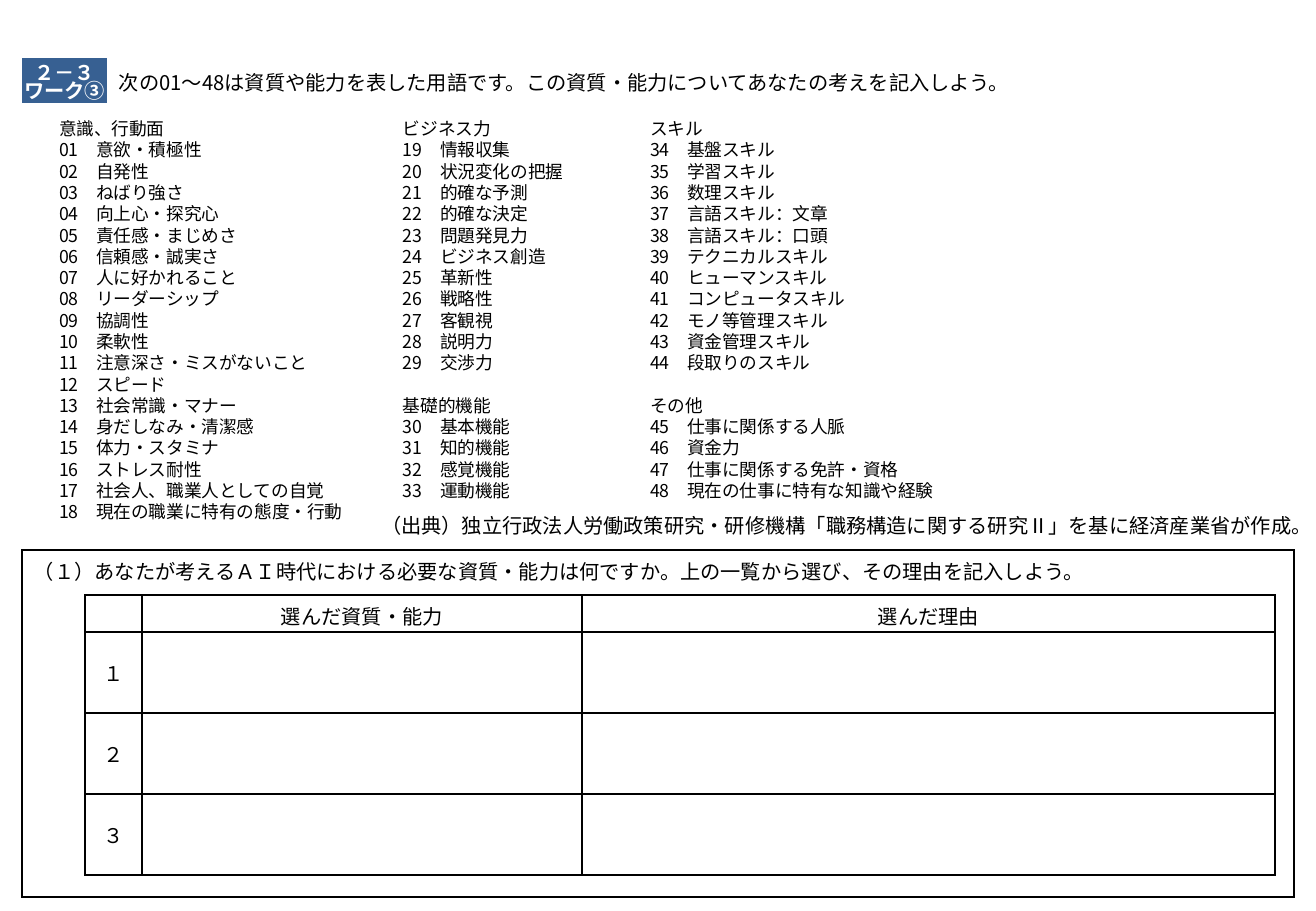
from lxml import etree
from pptx import Presentation
from pptx.dml.color import RGBColor
from pptx.enum.shapes import MSO_SHAPE
from pptx.enum.text import MSO_ANCHOR, PP_ALIGN
from pptx.oxml.ns import qn
from pptx.util import Emu, Pt

BLACK = RGBColor(0, 0, 0)
WHITE = RGBColor(255, 255, 255)
BLUE = RGBColor(0x37, 0x60, 0x92)
FONT = "Noto Sans CJK JP"
LEFT, CENTER = PP_ALIGN.LEFT, PP_ALIGN.CENTER
TOP, MIDDLE, BOTTOM = MSO_ANCHOR.TOP, MSO_ANCHOR.MIDDLE, MSO_ANCHOR.BOTTOM
RECTANGLE = MSO_SHAPE.RECTANGLE
PX = 914400 / 121.5
TERM_PITCH = Pt(12.6)


def write(holder, lines, size=12, color=BLACK, bold=False, align=LEFT,
          anchor=TOP, spacing=None, margins=(12, 6, 12, 6), gap_before=()):
    """Fill a text frame or table cell; margins are left, top, right, bottom."""
    frame = getattr(holder, "text_frame", holder)
    frame.word_wrap = True
    holder.vertical_anchor = anchor
    (holder.margin_left, holder.margin_top,
     holder.margin_right, holder.margin_bottom) = [Emu(round(m * PX)) for m in margins]
    for i, line in enumerate(lines):
        paragraph = frame.add_paragraph() if i else frame.paragraphs[0]
        paragraph.alignment = align
        if spacing:
            paragraph.line_spacing = spacing
        if i in gap_before:
            paragraph.space_before = TERM_PITCH
        if not line:
            etree.SubElement(paragraph._p, qn("a:endParaRPr"), sz=str(size * 100))
            continue
        run = paragraph.add_run()
        run.text = line
        run.font.size, run.font.bold, run.font.name = Pt(size), bold, FONT
        run.font.color.rgb = color
        etree.SubElement(run._r.get_or_add_rPr(), qn("a:ea"), typeface=FONT)


def add_grid(left, top, widths, heights):
    """Add an unfilled table with thin black borders."""
    box = [Emu(round(n * PX)) for n in (left, top, sum(widths), sum(heights))]
    grid = slide.shapes.add_table(len(heights), len(widths), *box).table
    grid.first_row = grid.horz_banding = False
    for tracks, sizes in ((grid.columns, widths), (grid.rows, heights)):
        for track, length in zip(tracks, sizes):
            setattr(track, "width" if sizes is widths else "height", Emu(round(length * PX)))
    for cell in grid.iter_cells():
        tc_pr = cell._tc.get_or_add_tcPr()
        for side in ("lnL", "lnR", "lnT", "lnB"):
            border = etree.SubElement(tc_pr, qn(f"a:{side}"), w=str(Pt(1)))
            paint = etree.SubElement(border, qn("a:solidFill"))
            etree.SubElement(paint, qn("a:srgbClr"), val=str(BLACK))
        cell.fill.background()
    return grid


prs = Presentation()
prs.slide_width, prs.slide_height = Emu(round(1316 * PX)), Emu(round(911 * PX))
slide = prs.slides.add_slide(prs.slide_layouts[6])

# Instruction and source credit
statements = [
    (107, 70, 959, "次の01～48は資質や能力を表した用語です。この資質・能力についてあなたの考えを記入しよう。"),
    (369, 513, 947, "（出典）独立行政法人労働政策研究・研修機構「職務構造に関する研究Ⅱ」を基に経済産業省が作成。"),
]
for left, top, width, statement in statements:
    box = [Emu(round(n * PX)) for n in (left, top, width, 28)]
    write(slide.shapes.add_textbox(*box).text_frame, [statement],
          anchor=MIDDLE, spacing=0.9, margins=(12, 0, 0, 0))

# Worksheet badge
badge = slide.shapes.add_shape(RECTANGLE, *[Emu(round(n * PX)) for n in (22, 58, 85, 45)])
badge.shadow.inherit = False
badge.fill.solid()
badge.fill.fore_color.rgb = BLUE
badge.line.fill.background()
write(badge.text_frame, ["２－３", "ワーク③"], color=WHITE, bold=True, align=CENTER,
      anchor=BOTTOM, spacing=Pt(11), margins=(0, 0, 0, 0))

# Three columns of terms, numbered throughout
term_columns = [
    (47, 324, [("意識、行動面", [
        "意欲・積極性", "自発性", "ねばり強さ", "向上心・探究心", "責任感・まじめさ",
        "信頼感・誠実さ", "人に好かれること", "リーダーシップ", "協調性", "柔軟性",
        "注意深さ・ミスがないこと", "スピード", "社会常識・マナー", "身だしなみ・清潔感",
        "体力・スタミナ", "ストレス耐性", "社会人、職業人としての自覚",
        "現在の職業に特有の態度・行動"])]),
    (391, 228, [("ビジネス力", [
        "情報収集", "状況変化の把握", "的確な予測", "的確な決定", "問題発見力",
        "ビジネス創造", "革新性", "戦略性", "客観視", "説明力", "交渉力"]),
        ("基礎的機能", ["基本機能", "知的機能", "感覚機能", "運動機能"])]),
    (638, 324, [("スキル", [
        "基盤スキル", "学習スキル", "数理スキル", "言語スキル：文章", "言語スキル：口頭",
        "テクニカルスキル", "ヒューマンスキル", "コンピュータスキル", "モノ等管理スキル",
        "資金管理スキル", "段取りのスキル"]),
        ("その他", ["仕事に関係する人脈", "資金力", "仕事に関係する免許・資格",
                 "現在の仕事に特有な知識や経験"])]),
]
number = 0
for left, width, groups in term_columns:
    lines, gaps = [], []
    for heading, terms in groups:
        if lines:
            gaps.append(len(lines))
        lines.append(heading)
        for term in terms:
            number += 1
            lines.append(f"{number:02}　{term}")
    box = [Emu(round(n * PX)) for n in (left, 112, width, 416)]
    write(slide.shapes.add_textbox(*box).text_frame, lines, size=10.5,
          spacing=TERM_PITCH, gap_before=gaps)

# Question frame
question = add_grid(22, 550, [1272], [347])
write(question.cell(0, 0),
      ["（１）あなたが考えるＡＩ時代における必要な資質・能力は何ですか。上の一覧から選び、その理由を記入しよう。"])

# Answer table
answers = add_grid(85, 595, [57, 440, 693], [37, 81, 81, 81])
answer_rows = [["", "選んだ資質・能力", "選んだ理由"]] + [[n, "", ""] for n in "１２３"]
for r, row in enumerate(answer_rows):
    for c, entry in enumerate(row):
        write(answers.cell(r, c), [entry], align=CENTER, anchor=MIDDLE,
              margins=(12, 6, 12, 6 if r else 1))

prs.save("out.pptx")
